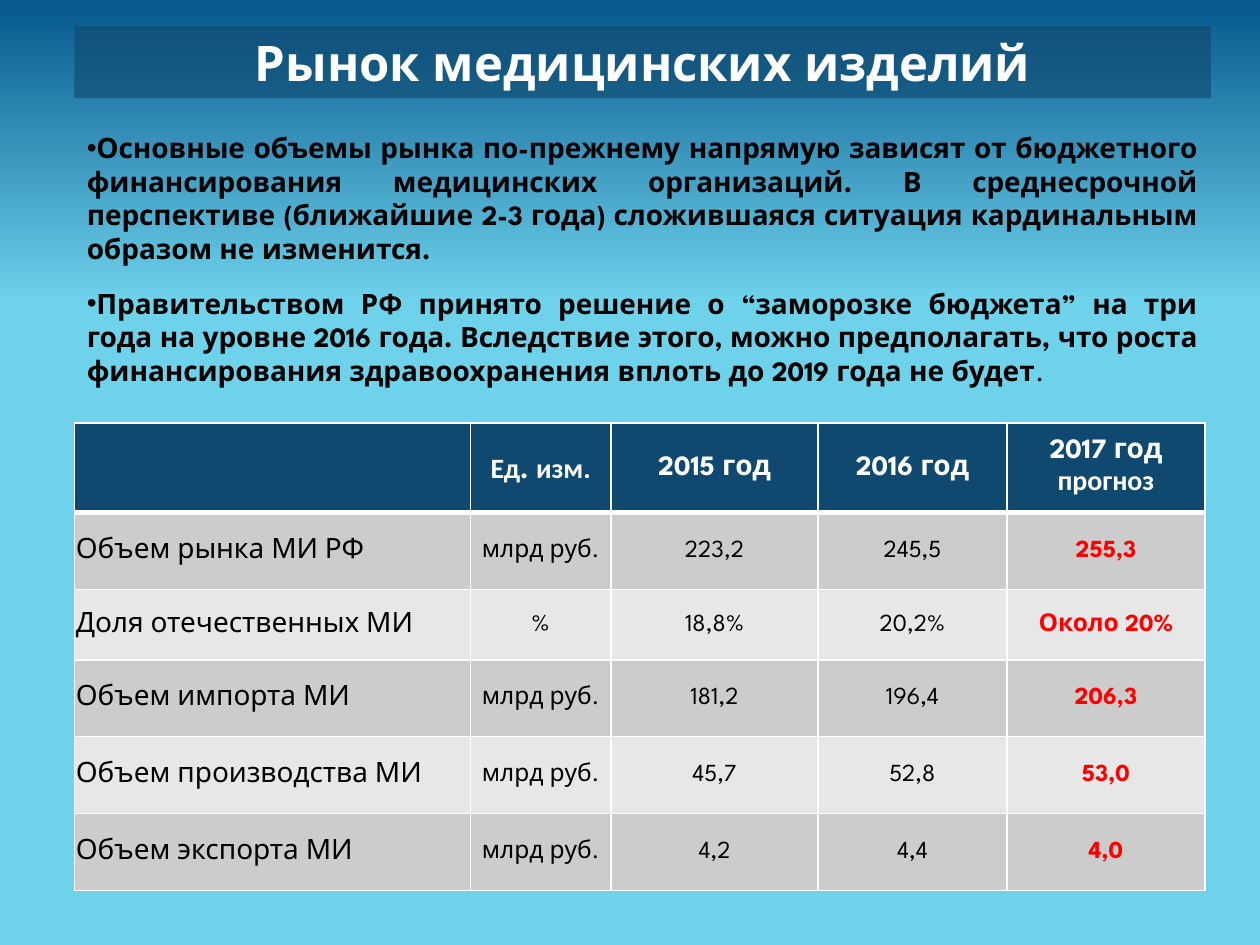
from lxml import etree
from pptx import Presentation
from pptx import util as u
from pptx.dml.color import RGBColor
from pptx.enum import shapes, text
from pptx.oxml.ns import qn

# Content
TITLE = "Рынок медицинских изделий"
BULLETS = [
    [("Основные объемы рынка по-прежнему напрямую зависят от бюджетного "
      "финансирования медицинских организаций. В среднесрочной перспективе "
      "(ближайшие 2-3 года) сложившаяся ситуация кардинальным образом не изменится.", True)],
    [("Правительством РФ принято решение о “заморозке бюджета” на три года на уровне "
      "2016 года. Вследствие этого, можно предполагать, что роста финансирования "
      "здравоохранения вплоть до 2019 года не будет", True), (".", False)],
]
SPARTAN, CALIBRI = "League Spartan", "Calibri"
# Each header cell is a list of paragraphs, each paragraph a list of (text, font)
HEADER = [
    [],
    [[("Ед", CALIBRI), (". ", SPARTAN), ("изм.", CALIBRI)]],
    [[("2015 год", SPARTAN)]],
    [[("2016 год", SPARTAN)]],
    [[("2017 год", SPARTAN)], [("прогноз", CALIBRI)]],
]
ROWS = [
    ("Объем рынка МИ РФ", "млрд руб.", "223,2", "245,5", "255,3"),
    ("Доля отечественных МИ", "%", "18,8%", "20,2%", "Около 20%"),
    ("Объем импорта МИ", "млрд руб.", "181,2", "196,4", "206,3"),
    ("Объем производства МИ", "млрд руб.", "45,7", "52,8", "53,0"),
    ("Объем экспорта МИ", "млрд руб.", "4,2", "4,4", "4,0"),
]
COLUMN_WIDTHS = [7.98, 2.84, 4.17, 3.81, 3.99]
ROW_HEIGHTS = [1.8, 1.55, 1.42, 1.55, 1.55, 1.55]
LEFT, WIDTH = 1.5, 22.91
NAVY, WHITE, BLACK, RED = "0F496F", "FFFFFF", "000000", "FF0000"
BANDS = ["CCCCCC", "E7E7E7"]


def color(value):
    return RGBColor.from_string(value)


def set_font(font, size, value, bold, name=SPARTAN):
    font.size, font.bold, font.name = u.Pt(size), bold, name
    font.color.rgb = color(value)


def add_bullet(paragraph):
    properties = paragraph._p.get_or_add_pPr()
    etree.SubElement(properties, qn("a:buFont"), typeface="Arial")
    etree.SubElement(properties, qn("a:buChar"), char="•")


def style_cell(cell, fill, bottom_width=1):
    properties = cell._tc.get_or_add_tcPr()
    for side in ("L", "R", "T", "B"):
        width = bottom_width if side == "B" else 1
        line = etree.SubElement(properties, qn("a:ln" + side), w=str(u.Pt(width)))
        solid = etree.SubElement(line, qn("a:solidFill"))
        etree.SubElement(solid, qn("a:srgbClr"), val=WHITE)
    cell.fill.solid()
    cell.fill.fore_color.rgb = color(fill)
    cell.vertical_anchor = text.MSO_ANCHOR.MIDDLE
    cell.margin_left = cell.margin_right = cell.margin_top = u.Cm(0.03)
    cell.margin_bottom = 0


presentation = Presentation()
presentation.slide_width, presentation.slide_height = u.Cm(25.4), u.Cm(19.05)
slide = presentation.slides.add_slide(presentation.slide_layouts[6])

# Background gradient, dark at the top
background = slide.background.fill
background.gradient()
background.gradient_angle = 90
for stop, (position, value) in zip(background.gradient_stops,
                                   [(0.68, "6ED2EB"), (1, "06588E")]):
    stop.position = position
    stop.color.rgb = color(value)

# Bulleted text
box = slide.shapes.add_textbox(u.Cm(LEFT), u.Cm(2.51), u.Cm(WIDTH), u.Cm(5.46))
frame = box.text_frame
frame.word_wrap = True
for index, runs in enumerate(BULLETS):
    paragraph = frame.add_paragraph() if index else frame.paragraphs[0]
    paragraph.alignment = text.PP_ALIGN.JUSTIFY
    paragraph.space_before = paragraph.space_after = u.Pt(6)
    add_bullet(paragraph)
    set_font(paragraph.font, 16, BLACK, True)
    for words, bold in runs:
        run = paragraph.add_run()
        run.text = words
        set_font(run.font, 16, BLACK, bold)

# Market table
table = slide.shapes.add_table(
    len(ROW_HEIGHTS), len(COLUMN_WIDTHS), u.Cm(LEFT), u.Cm(8.53),
    u.Cm(sum(COLUMN_WIDTHS)), u.Cm(sum(ROW_HEIGHTS))).table
for column, width in zip(table.columns, COLUMN_WIDTHS):
    column.width = u.Cm(width)
for row, height in zip(table.rows, ROW_HEIGHTS):
    row.height = u.Cm(height)

for column_index, paragraphs in enumerate(HEADER):
    cell = table.cell(0, column_index)
    style_cell(cell, NAVY, bottom_width=3)
    for index, runs in enumerate(paragraphs):
        frame = cell.text_frame
        paragraph = frame.add_paragraph() if index else frame.paragraphs[0]
        paragraph.alignment = text.PP_ALIGN.CENTER
        for words, name in runs:
            run = paragraph.add_run()
            run.text = words
            set_font(run.font, 16, WHITE, True, name)

for row_index, values in enumerate(ROWS):
    for column_index, value in enumerate(values):
        cell = table.cell(row_index + 1, column_index)
        style_cell(cell, BANDS[row_index % 2])
        is_label, is_forecast = column_index == 0, column_index == len(values) - 1
        paragraph = cell.text_frame.paragraphs[0]
        paragraph.text = value
        paragraph.alignment = text.PP_ALIGN.LEFT if is_label else text.PP_ALIGN.CENTER
        set_font(paragraph.runs[0].font, 16 if is_label else 14,
                 RED if is_forecast else BLACK, is_forecast)

# Title band, partly transparent
band = slide.shapes.add_shape(shapes.MSO_SHAPE.RECTANGLE,
                              u.Cm(LEFT), u.Cm(0.53), u.Cm(WIDTH), u.Cm(1.45))
band.shadow.inherit = False
band.line.fill.background()
band.fill.solid()
band.fill.fore_color.rgb = color(NAVY)
band_color = band._element.spPr.find(qn("a:solidFill")).find(qn("a:srgbClr"))
etree.SubElement(band_color, qn("a:alpha"), val="62000")
band.text_frame.word_wrap = True
paragraph = band.text_frame.paragraphs[0]
paragraph.text = TITLE
paragraph.alignment = text.PP_ALIGN.CENTER
set_font(paragraph.font, 28, WHITE, True)

presentation.save("out.pptx")
